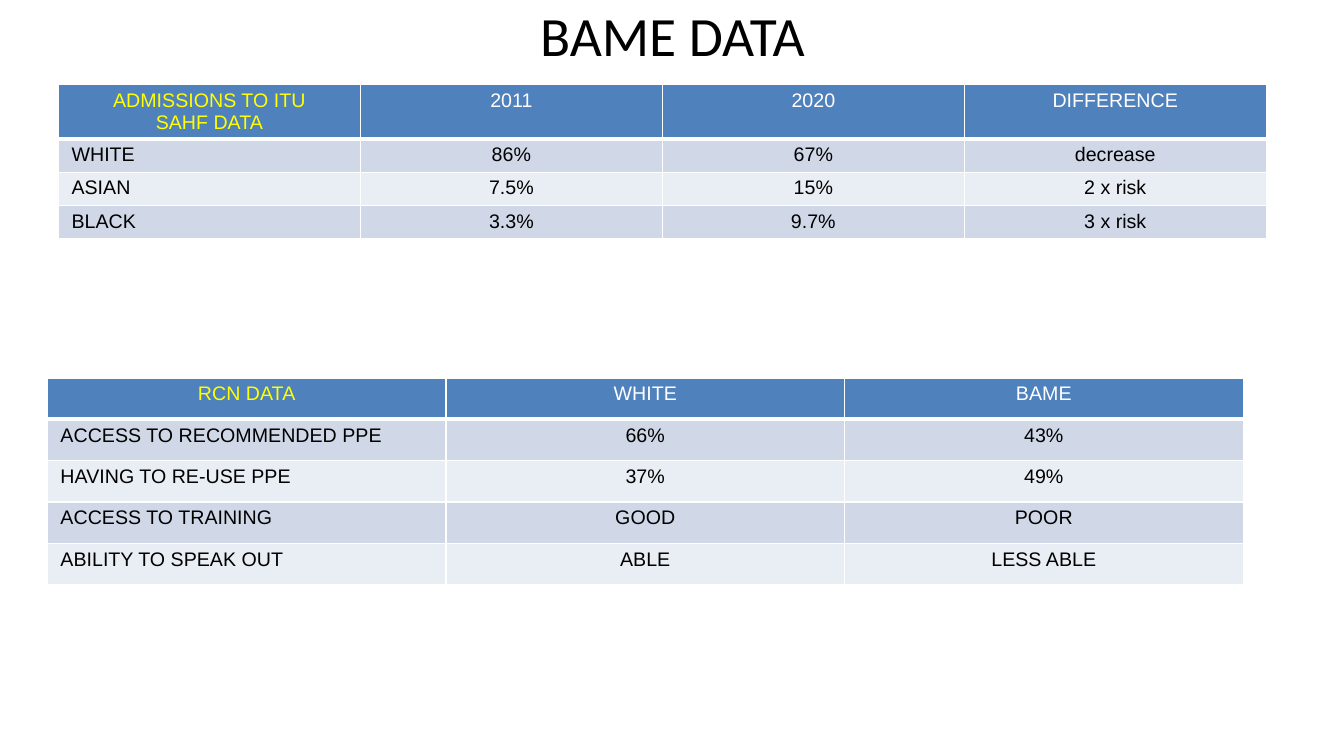
from lxml.etree import SubElement
from pptx import Presentation
from pptx.dml.color import RGBColor
from pptx.enum.text import MSO_ANCHOR, MSO_AUTO_SIZE, PP_ALIGN
from pptx.oxml.ns import qn
from pptx.util import Inches, Pt


def color(hex_value):
    return RGBColor.from_string(hex_value)


def add_border(cell, side, points):
    line = SubElement(cell._tc.get_or_add_tcPr(), qn(f"a:ln{side}"), w=str(Pt(points)))
    fill = SubElement(line, qn("a:solidFill"))
    SubElement(fill, qn("a:srgbClr"), val="FFFFFF")


admissions = [
    ["ADMISSIONS TO ITU\nSAHF DATA", "2011", "2020", "DIFFERENCE"],
    ["WHITE", "86%", "67%", "decrease"],
    ["ASIAN", "7.5%", "15%", "2 x risk"],
    ["BLACK", "3.3%", "9.7%", "3 x risk"],
]
protection = [
    ["RCN DATA", "WHITE", "BAME"],
    ["ACCESS TO RECOMMENDED PPE", "66%", "43%"],
    ["HAVING TO RE-USE PPE", "37%", "49%"],
    ["ACCESS TO TRAINING", "GOOD", "POOR"],
    ["ABILITY TO SPEAK OUT", "ABLE", "LESS ABLE"],
]

presentation = Presentation()
presentation.slide_width = Inches(13.33)
presentation.slide_height = Inches(7.5)
slide = presentation.slides.add_slide(presentation.slide_layouts[5])

heading = slide.shapes.title
heading.left, heading.top = Inches(0.67), Inches(0.17)
heading.width, heading.height = Inches(12), Inches(0.35)
heading.text_frame.text = "BAME DATA"
heading.text_frame.auto_size = MSO_AUTO_SIZE.NONE
heading.text_frame.vertical_anchor = MSO_ANCHOR.MIDDLE
heading_line = heading.text_frame.paragraphs[0]
heading_line.alignment = PP_ALIGN.CENTER
heading_line.font.size = Pt(39.6)
heading_line.font.name = "Calibri"
heading_line.font.color.rgb = color("000000")

for records, left, top, width, row_height in [
    (admissions, 0.58, 0.84, 11.98, 0.33),
    (protection, 0.47, 3.75, 11.86, 0.41),
]:
    table = slide.shapes.add_table(
        len(records), len(records[0]), Inches(left), Inches(top),
        Inches(width), Inches(row_height * len(records)),
    ).table
    for row, record in enumerate(records):
        for column, entry in enumerate(record):
            cell = table.cell(row, column)
            is_header = row == 0
            is_label = column == 0
            cell.margin_left = cell.margin_right = Inches(0.13)
            cell.margin_top = cell.margin_bottom = Inches(0.05)
            for side in "LRTB":
                add_border(cell, side, 3 if is_header and side == "B" else 1)
            if is_header:
                background = "4F81BD"
                ink = "FFFF00" if is_label else "FFFFFF"
            else:
                background = "D0D8E8" if row % 2 else "E9EDF4"
                ink = "000000"
            cell.fill.solid()
            cell.fill.fore_color.rgb = color(background)
            cell.text_frame.text = entry
            for paragraph in cell.text_frame.paragraphs:
                paragraph.alignment = PP_ALIGN.LEFT if is_label and not is_header else PP_ALIGN.CENTER
                for run in paragraph.runs:
                    run.font.name = "Arial"
                    run.font.size = Pt(14)
                    run.font.bold = False
                    run.font.color.rgb = color(ink)

presentation.save("out.pptx")
